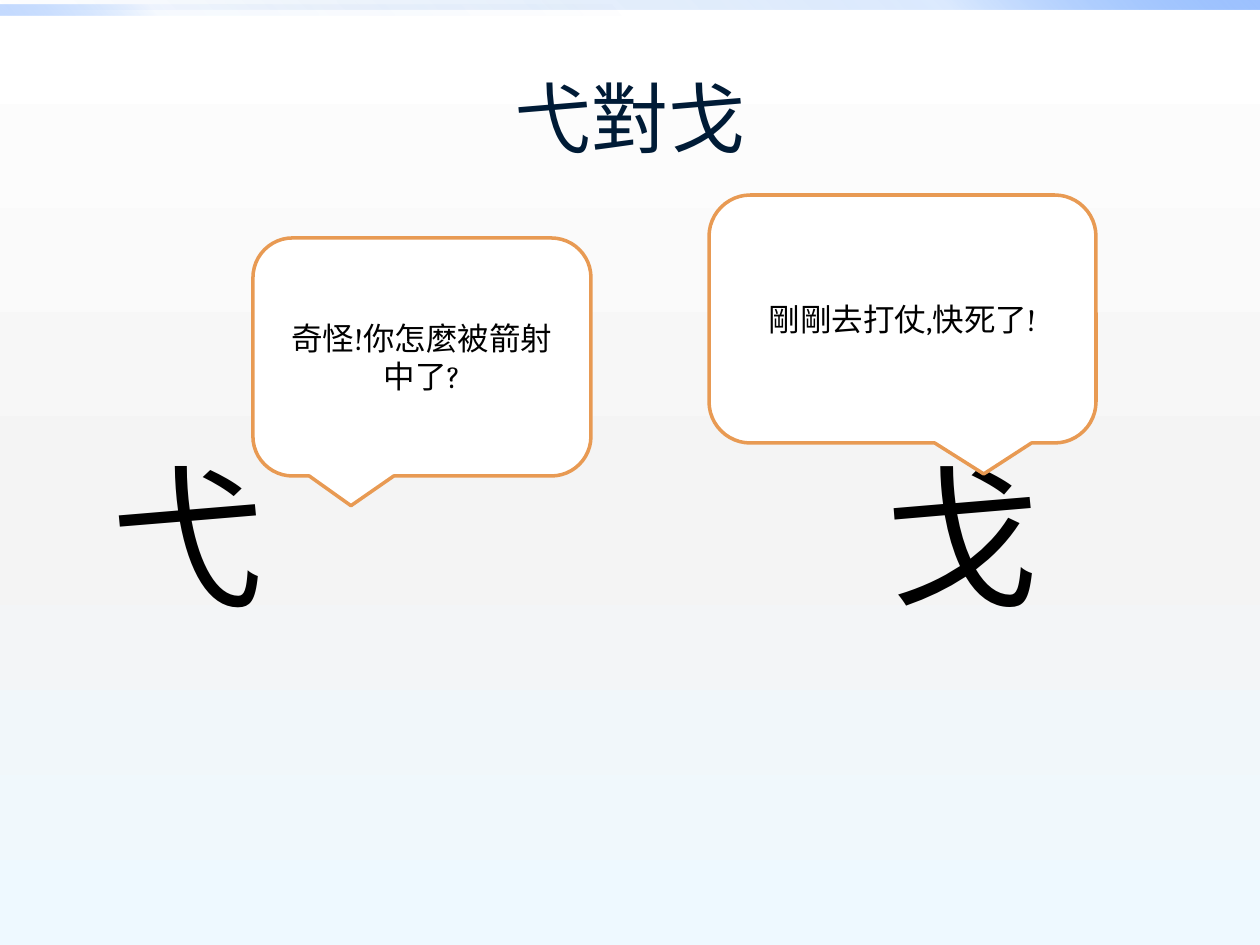
import pptx
import pptx.dml.color
import pptx.enum.shapes
import pptx.enum.text
import pptx.oxml.ns
import pptx.util
from lxml import etree

RGB = pptx.dml.color.RGBColor
WHITE = RGB(0xFF, 0xFF, 0xFF)
GREY = RGB(0xF4, 0xF4, 0xF4)
PALE_BLUE = RGB(0xEE, 0xF9, 0xFF)
DEEP_BLUE = RGB(0x00, 0x58, 0xB7)
MID_BLUE = RGB(0x4F, 0x95, 0xFF)
LIGHT_BLUE = RGB(0x9E, 0xC2, 0xFF)
NAVY = RGB(0x00, 0x1B, 0x36)
ORANGE = RGB(0xE8, 0x9A, 0x53)
BLACK = RGB(0, 0, 0)

PX_PER_INCH = 126
SHAPES = pptx.enum.shapes.MSO_SHAPE


def px(length):
    return pptx.util.Emu(round(length * 914400 / PX_PER_INCH))


def box(left, top, width, height):
    return px(left), px(top), px(width), px(height)


def write(frame, text, size, font="Cambria", color=BLACK):
    """Put centred text in the middle of a frame."""
    frame.word_wrap = True
    frame.vertical_anchor = pptx.enum.text.MSO_ANCHOR.MIDDLE
    paragraph = frame.paragraphs[0]
    paragraph.alignment = pptx.enum.text.PP_ALIGN.CENTER
    run = paragraph.add_run()
    run.text = text
    run.font.size = pptx.util.Pt(size)
    run.font.name = font
    run.font.color.rgb = color


def add_text(slide, place, text, **text_format):
    write(slide.shapes.add_textbox(*box(*place)).text_frame, text, **text_format)


def set_gradient(fill, owner, stops, angle):
    """Fill with (position %, colour, opacity %) stops; angle is counter-clockwise."""
    fill.gradient()
    fill.gradient_angle = angle
    qn = pptx.oxml.ns.qn
    stop_list = next(owner.iter(qn("a:gsLst")))
    for old_stop in list(stop_list):
        stop_list.remove(old_stop)
    for position, color, opacity in stops:
        stop = etree.SubElement(stop_list, qn("a:gs"), pos=str(position * 1000))
        rgb = etree.SubElement(stop, qn("a:srgbClr"), val=str(color))
        if opacity < 100:
            etree.SubElement(rgb, qn("a:alpha"), val=str(opacity * 1000))


def add_bar(slide, place, opacities, angle):
    bar = slide.shapes.add_shape(SHAPES.RECTANGLE, *box(*place))
    bar.shadow.inherit = False
    bar.line.fill.background()
    colors = (DEEP_BLUE, MID_BLUE, LIGHT_BLUE)
    set_gradient(bar.fill, bar.element, zip((0, 75, 100), colors, opacities), angle)


def add_speech(slide, place, text, tip):
    """Add a bubble; tip is the pointer's offset from centre as a share of width."""
    bubble = slide.shapes.add_shape(SHAPES.ROUNDED_RECTANGULAR_CALLOUT, *box(*place))
    bubble.adjustments[0] = tip
    bubble.shadow.inherit = False
    bubble.fill.solid()
    bubble.fill.fore_color.rgb = WHITE
    bubble.line.color.rgb = ORANGE
    bubble.line.width = pptx.util.Pt(2)
    write(bubble.text_frame, text, size=18)


def main():
    deck = pptx.Presentation()
    deck.slide_width, deck.slide_height = px(1260), px(945)
    slide = deck.slides.add_slide(deck.slide_layouts[6])

    # Background and top bars
    set_gradient(slide.background.fill, slide.element,
                 [(0, WHITE, 100), (55, GREY, 100), (100, PALE_BLUE, 100)], 270)
    add_bar(slide, (0, 0, 1260, 10), (0, 20, 100), 45)
    add_bar(slide, (0, 5, 630, 10), (0, 5, 60), 225)

    # Title
    add_text(slide, (63, 38, 1134, 157), "弋對戈", size=44, font="Calibri", color=NAVY)

    # The two characters
    for left, character in ((77, "弋"), (852, "戈")):
        add_text(slide, (left, 424, 220, 220), character, size=88)

    # What they say
    add_speech(slide, (253, 238, 338, 238), "奇怪!你怎麼被箭射中了?", tip=-0.21)
    add_speech(slide, (709, 195, 387, 248), "剛剛去打仗,快死了!", tip=0.21)

    deck.save("out.pptx")


if __name__ == "__main__":
    main()
